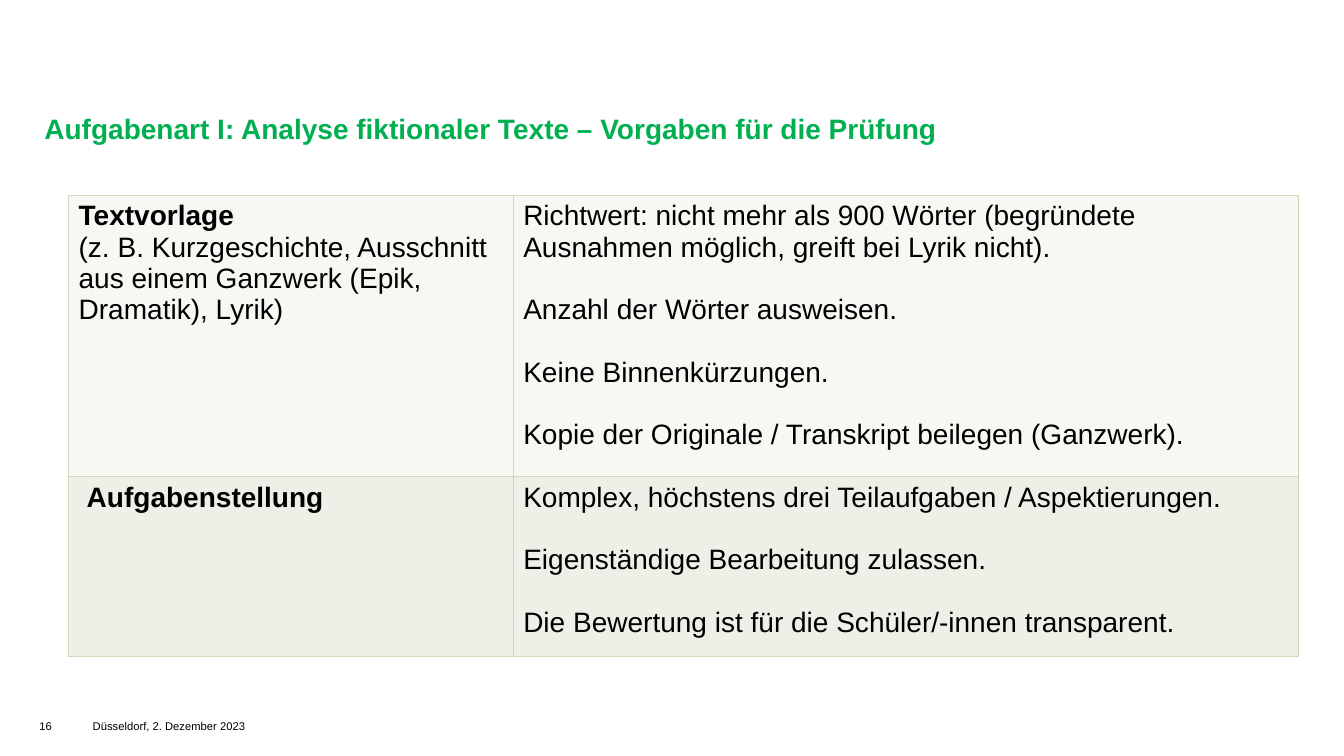
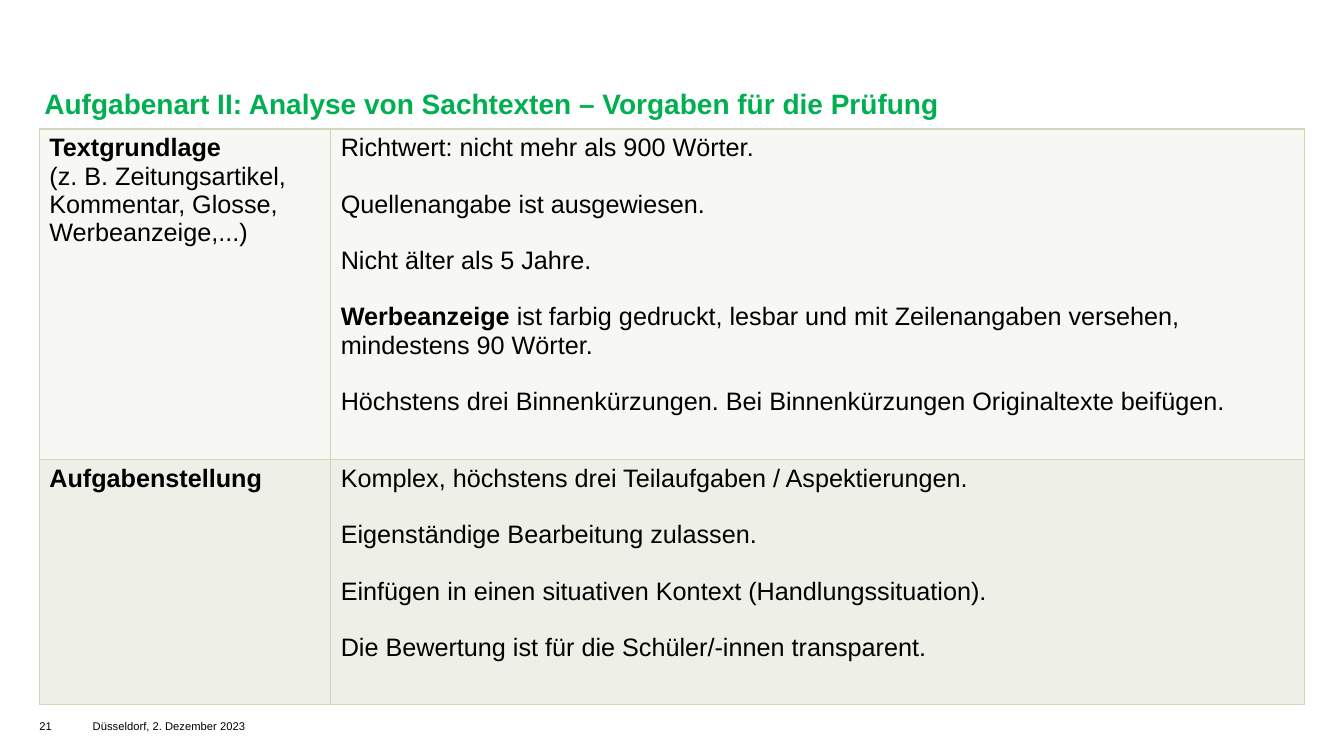
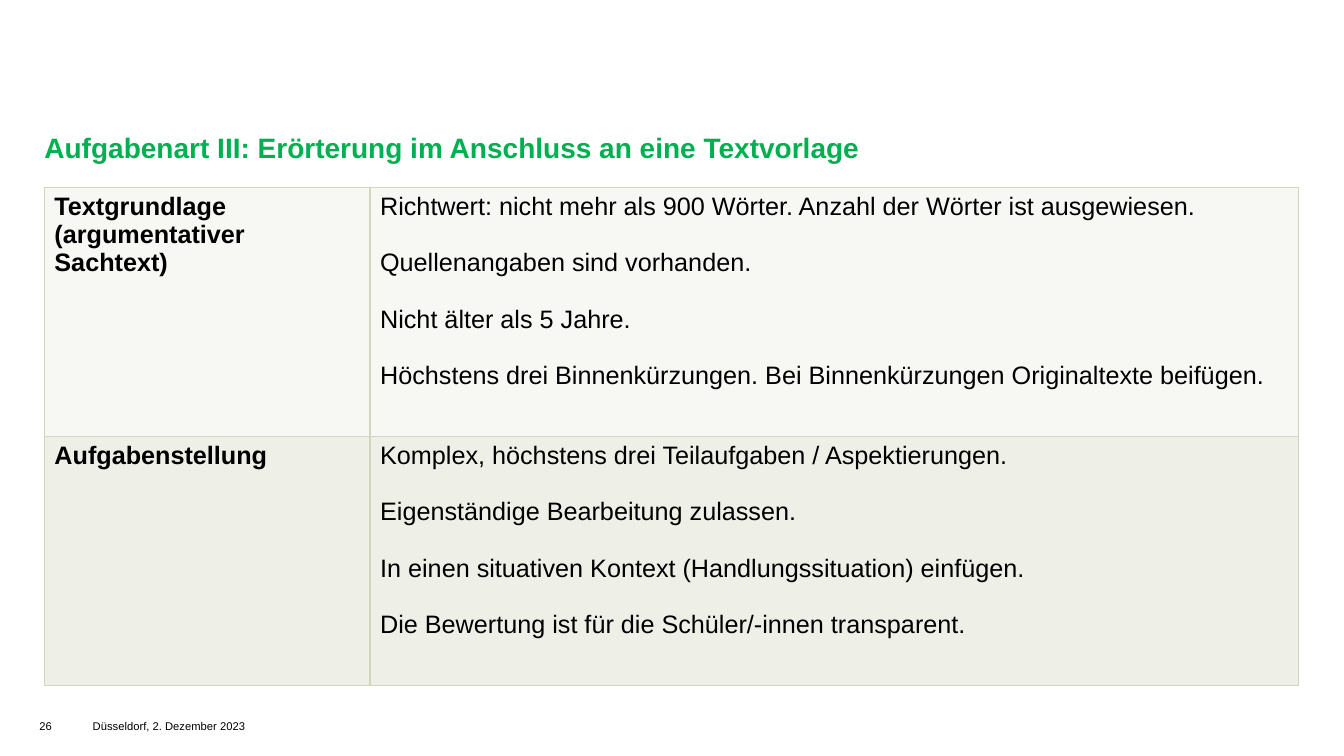
from dataclasses import dataclass

from lxml.etree import SubElement
from pptx import Presentation
from pptx.dml.color import RGBColor
from pptx.enum.text import MSO_ANCHOR, MSO_AUTO_SIZE, PP_ALIGN
from pptx.oxml.ns import qn
from pptx.util import Emu, Pt

EMU_PER_PX = 9144  # 100 px to the inch
FONT = "Arial"
LINE_HEIGHT = 1.117  # single line spacing of the font, in ems
CELL_MARGIN = 10
COLORS = {
    "title": "00B050",
    "text": "000000",
    "border": "D2D7BB",
    "odd_row": "F7F8F3",
    "even_row": "EEF0E7",
}
FOOTER_DATE = "Düsseldorf, 2. Dezember 2023"
SHARED_TASK = "Komplex, höchstens drei Teilaufgaben / Aspektierungen."
SHARED_WORK = "Eigenständige Bearbeitung zulassen."
SHARED_GRADING = "Die Bewertung ist für die Schüler/-innen transparent."
SHARED_AGE = "Nicht älter als 5 Jahre."
SHARED_CUTS = ("Höchstens drei Binnenkürzungen. "
               "Bei Binnenkürzungen Originaltexte beifügen.")


@dataclass
class Row:
    """Texts mark bold passages with a pair of asterisks on either side."""
    height: int
    label: list
    rules: list
    label_indent: int = 0


@dataclass
class RuleSlide:
    number: int
    title: str
    title_box: tuple
    table_position: tuple
    columns: tuple
    text_size: int
    rows: list


SLIDES = [
    RuleSlide(
        16, "Aufgabenart I: Analyse fiktionaler Texte – Vorgaben für die Prüfung",
        (44, 92, 1244, 71), (68, 194), (441, 779), 20,
        [
            Row(279,
                ["**Textvorlage**",
                 "(z. B. Kurzgeschichte, Ausschnitt aus einem Ganzwerk "
                 "(Epik, Dramatik), Lyrik)"],
                ["Richtwert: nicht mehr als 900 Wörter (begründete Ausnahmen "
                 "möglich, greift bei Lyrik nicht).",
                 "Anzahl der Wörter ausweisen.",
                 "Keine Binnenkürzungen.",
                 "Kopie der Originale / Transkript beilegen (Ganzwerk)."]),
            Row(178, ["**Aufgabenstellung**"],
                [SHARED_TASK, SHARED_WORK, SHARED_GRADING], label_indent=8),
        ]),
    RuleSlide(
        21, "Aufgabenart II: Analyse von Sachtexten – Vorgaben für die Prüfung",
        (44, 74, 1244, 57), (39, 128), (289, 966), 18,
        [
            Row(328,
                ["**Textgrundlage**",
                 "(z. B. Zeitungsartikel, Kommentar, Glosse, Werbeanzeige,...)"],
                ["Richtwert: nicht mehr als 900 Wörter.",
                 "Quellenangabe ist ausgewiesen.",
                 SHARED_AGE,
                 "**Werbeanzeige **ist farbig gedruckt, lesbar und mit "
                 "Zeilenangaben versehen, mindestens 90 Wörter.",
                 SHARED_CUTS]),
            Row(243, ["**Aufgabenstellung**"],
                [SHARED_TASK, SHARED_WORK,
                 "Einfügen in einen situativen Kontext (Handlungssituation).",
                 SHARED_GRADING]),
        ]),
    RuleSlide(
        26, "Aufgabenart III: Erörterung im Anschluss an eine Textvorlage",
        (44, 115, 1244, 63), (44, 186), (323, 921), 18,
        [
            Row(247,
                ["**Textgrundlage**", "**(argumentativer Sachtext)**"],
                ["Richtwert: nicht mehr als 900 Wörter. "
                 "Anzahl der Wörter ist ausgewiesen.",
                 "Quellenangaben sind vorhanden.",
                 SHARED_AGE,
                 SHARED_CUTS]),
            Row(247, ["**Aufgabenstellung**"],
                [SHARED_TASK, SHARED_WORK,
                 "In einen situativen Kontext (Handlungssituation) einfügen.",
                 SHARED_GRADING]),
        ]),
]


def px(length):
    return Emu(length * EMU_PER_PX)


def format_font(font, size, color, bold=False):
    font.name = FONT
    font.size = Pt(size)
    font.bold = bold
    font.color.rgb = RGBColor.from_string(COLORS[color])


def clear_margins(text_frame):
    text_frame.margin_left = text_frame.margin_right = 0
    text_frame.margin_top = text_frame.margin_bottom = 0
    text_frame.word_wrap = True


def place_title(slide, text, box):
    title = slide.shapes.title
    title.left, title.top, title.width, title.height = map(px, box)
    text_frame = title.text_frame
    text_frame.text = text
    clear_margins(text_frame)
    text_frame.auto_size = MSO_AUTO_SIZE.NONE
    text_frame.vertical_anchor = MSO_ANCHOR.MIDDLE
    paragraph = text_frame.paragraphs[0]
    paragraph.alignment = PP_ALIGN.LEFT
    format_font(paragraph.runs[0].font, 20, "title", bold=True)


def place_footer(slide, number):
    for text, left, width in ((str(number), 39, 42), (FOOTER_DATE, 92, 304)):
        box = slide.shapes.add_textbox(px(left), px(714), px(width), px(36))
        box.text_frame.text = text
        clear_margins(box.text_frame)
        format_font(box.text_frame.paragraphs[0].runs[0].font, 8, "text")


def draw_borders(cell):
    properties = cell._tc.get_or_add_tcPr()
    for side in ("lnL", "lnR", "lnT", "lnB"):
        line = SubElement(properties, qn(f"a:{side}"), w=str(Pt(1)))
        fill = SubElement(line, qn("a:solidFill"))
        SubElement(fill, qn("a:srgbClr"), val=COLORS["border"])


def write_cell(cell, texts, size, space_before, fill, indent=0):
    cell.margin_left = px(CELL_MARGIN + indent)
    cell.margin_right = px(CELL_MARGIN)
    draw_borders(cell)
    cell.fill.solid()
    cell.fill.fore_color.rgb = RGBColor.from_string(COLORS[fill])
    text_frame = cell.text_frame
    for index, text in enumerate(texts):
        paragraph = text_frame.add_paragraph() if index else text_frame.paragraphs[0]
        if index:
            paragraph.space_before = Pt(space_before)
        for part_index, part in enumerate(text.split("**")):
            if part:
                run = paragraph.add_run()
                run.text = part
                format_font(run.font, size, "text", bold=part_index % 2 == 1)


def place_rule_table(slide, position, columns, rows, size):
    left, top = position
    height = sum(row.height for row in rows)
    table = slide.shapes.add_table(
        len(rows), len(columns), px(left), px(top), px(sum(columns)), px(height)).table
    table.first_row = table.horz_banding = False
    for column, width in zip(table.columns, columns):
        column.width = px(width)
    blank_line = round(size * LINE_HEIGHT, 1)
    for index, row in enumerate(rows):
        table.rows[index].height = px(row.height)
        fill = "even_row" if index % 2 else "odd_row"
        write_cell(table.cell(index, 0), row.label, size, 0, fill, row.label_indent)
        write_cell(table.cell(index, 1), row.rules, size, blank_line, fill)


def build_rule_slide(presentation, content):
    slide = presentation.slides.add_slide(presentation.slide_layouts[5])
    place_title(slide, content.title, content.title_box)
    place_rule_table(slide, content.table_position, content.columns,
                     content.rows, content.text_size)
    place_footer(slide, content.number)


def main():
    presentation = Presentation()
    presentation.slide_width = px(1333)
    presentation.slide_height = px(750)
    for content in SLIDES:
        build_rule_slide(presentation, content)
    presentation.save("out.pptx")


if __name__ == "__main__":
    main()
